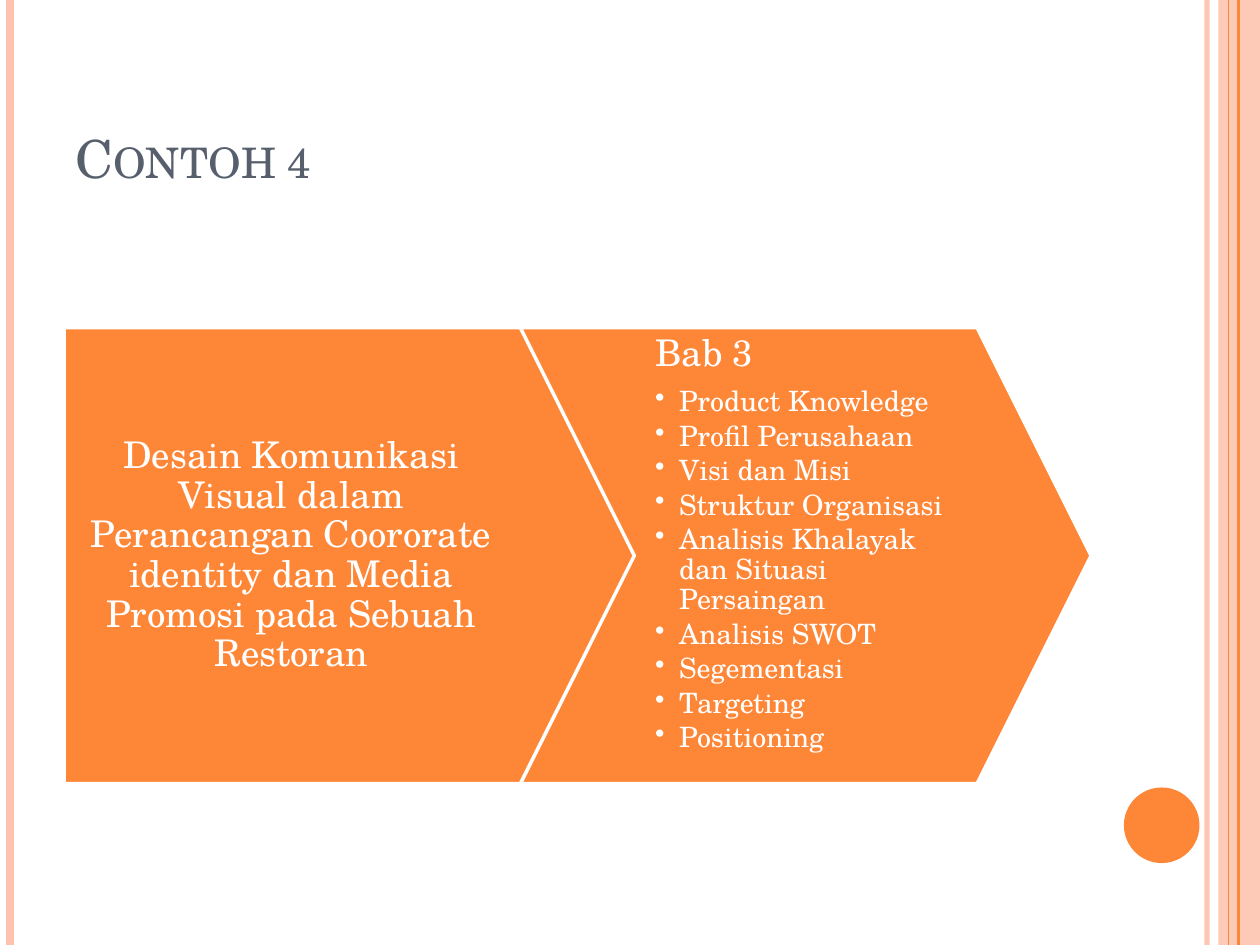
from lxml import etree
from pptx import Presentation
from pptx import util as u
from pptx.dml.color import RGBColor
from pptx.enum import shapes, text
from pptx.oxml.ns import qn

ORANGE, PEACH, WHITE, SLATE = "FE8637", "FEC3AE", "FFFFFF", "575F6D"
FONT = "TeX Gyre Schola"
TOPICS = [
    "Product Knowledge", "Profil Perusahaan", "Visi dan Misi",
    "Struktur Organisasi", "Analisis Khalayak dan Situasi Persaingan",
    "Analisis SWOT", "Segementasi", "Targeting", "Positioning",
]


def paint(color_format, color, opacity=100):
    """Set a solid colour, with opacity in percent."""
    color_format.rgb = RGBColor.from_string(color)
    if opacity < 100:
        node = color_format._xFill.find(qn("a:srgbClr"))
        etree.SubElement(node, qn("a:alpha"), val=str(opacity * 1000))


def write(para, words, size, color=WHITE, line_spacing=None, space_after=0):
    para.text = words
    para.font.name = FONT
    para.font.size = u.Pt(size)
    paint(para.font.color, color)
    para.line_spacing = line_spacing
    para.space_after = u.Pt(space_after)


deck = Presentation()
deck.slide_width, deck.slide_height = u.Inches(10), u.Inches(7.5)
page = deck.slides.add_slide(deck.slide_layouts[6])

# Side stripes, the band on the right and the dot, from back to front
preset = shapes.MSO_SHAPE
stripes = [(9.58, PEACH, 3, 93), (0.08, PEACH, 4.5, 100),
           (9.83, ORANGE, 1.5, 100), (9.75, ORANGE, 0.75, 100)]
solids = [(preset.RECTANGLE, 9.67, 0, 0.33, 7.5, PEACH, 87),
          (preset.OVAL, 8.92, 6.25, 0.6, 0.6, ORANGE, 100)]
for kind, left, top, width, height, color, opacity in solids:
    solid = page.shapes.add_shape(kind, u.Inches(left), u.Inches(top),
                                  u.Inches(width), u.Inches(height))
    solid.shadow.inherit = False
    solid.fill.solid()
    paint(solid.fill.fore_color, color, opacity)
    solid.line.fill.background()
for x, color, weight, opacity in stripes:
    stripe = page.shapes.add_connector(shapes.MSO_CONNECTOR.STRAIGHT, u.Inches(x), 0,
                                       u.Inches(x), deck.slide_height)
    stripe.line.width = u.Pt(weight)
    paint(stripe.line.color, color, opacity)
    etree.SubElement(stripe._element.spPr, qn("a:effectLst"))

# Title
title = page.shapes.add_textbox(u.Inches(0.5), u.Inches(0.3), u.Inches(8.17), u.Inches(1.25))
title.text_frame.word_wrap = True
title.text_frame.vertical_anchor = text.MSO_ANCHOR.BOTTOM
heading = title.text_frame.paragraphs[0]
write(heading, "Contoh 4", 30, SLATE)
heading._p.get_or_add_pPr().get_or_add_defRPr().set("cap", "small")

# Two arrows in a row, each with its text box
top, height = u.Inches(2.6), u.Inches(3.62)
steps = [(preset.PENTAGON, 0.51, 0.51, 4.08, 0.64, text.MSO_ANCHOR.MIDDLE),
         (preset.CHEVRON, 4.13, 5.04, 2.72, 0.16, text.MSO_ANCHOR.TOP)]
frames = []
for kind, left, text_left, text_width, right_inset, anchor in steps:
    arrow = page.shapes.add_shape(kind, u.Inches(left), top, u.Inches(4.53), height)
    arrow.adjustments[0] = 0.25
    arrow.shadow.inherit = False
    arrow.fill.solid()
    paint(arrow.fill.fore_color, ORANGE)
    arrow.line.width = u.Pt(2)
    paint(arrow.line.color, WHITE)

    box = page.shapes.add_textbox(u.Inches(text_left), top, u.Inches(text_width), height)
    frame = box.text_frame
    frame.word_wrap = True
    frame.vertical_anchor = anchor
    frame.margin_left, frame.margin_right = u.Inches(0.16), u.Inches(right_inset)
    frame.margin_top = frame.margin_bottom = u.Inches(0.06)
    frames.append(frame)

subject, chapter = frames
write(subject.paragraphs[0],
      "Desain Komunikasi Visual dalam Perancangan Coororate identity "
      "dan Media Promosi pada Sebuah Restoran", 21, line_spacing=0.9)
subject.paragraphs[0].alignment = text.PP_ALIGN.CENTER

write(chapter.paragraphs[0], "Bab 3", 21, line_spacing=0.9, space_after=7.35)
for topic in TOPICS:
    para = chapter.add_paragraph()
    write(para, topic, 16, line_spacing=0.9, space_after=2.4)
    props = para._p.get_or_add_pPr()
    props.set("marL", str(u.Inches(0.19)))
    props.set("indent", str(u.Inches(-0.19)))
    bullet = etree.Element(qn("a:buChar"), char="•")
    props.find(qn("a:defRPr")).addprevious(bullet)

deck.save("out.pptx")
